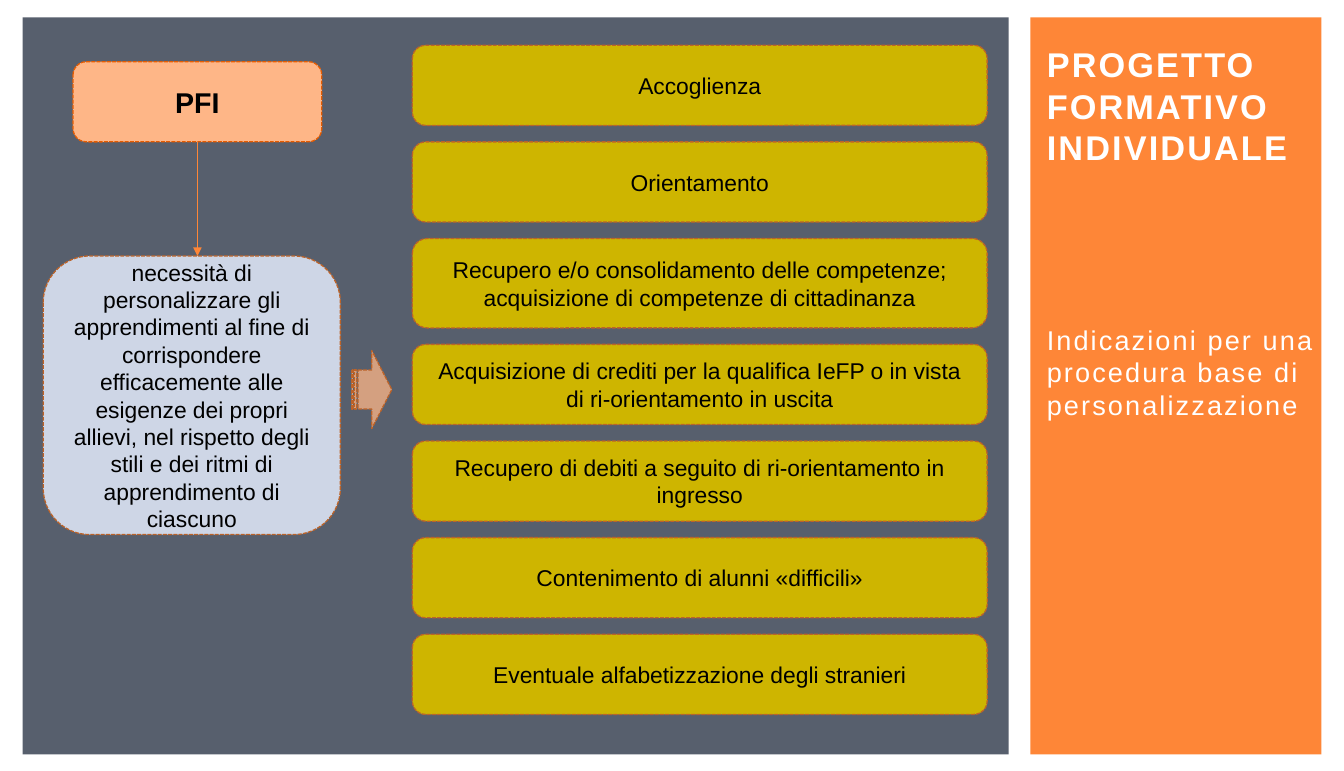
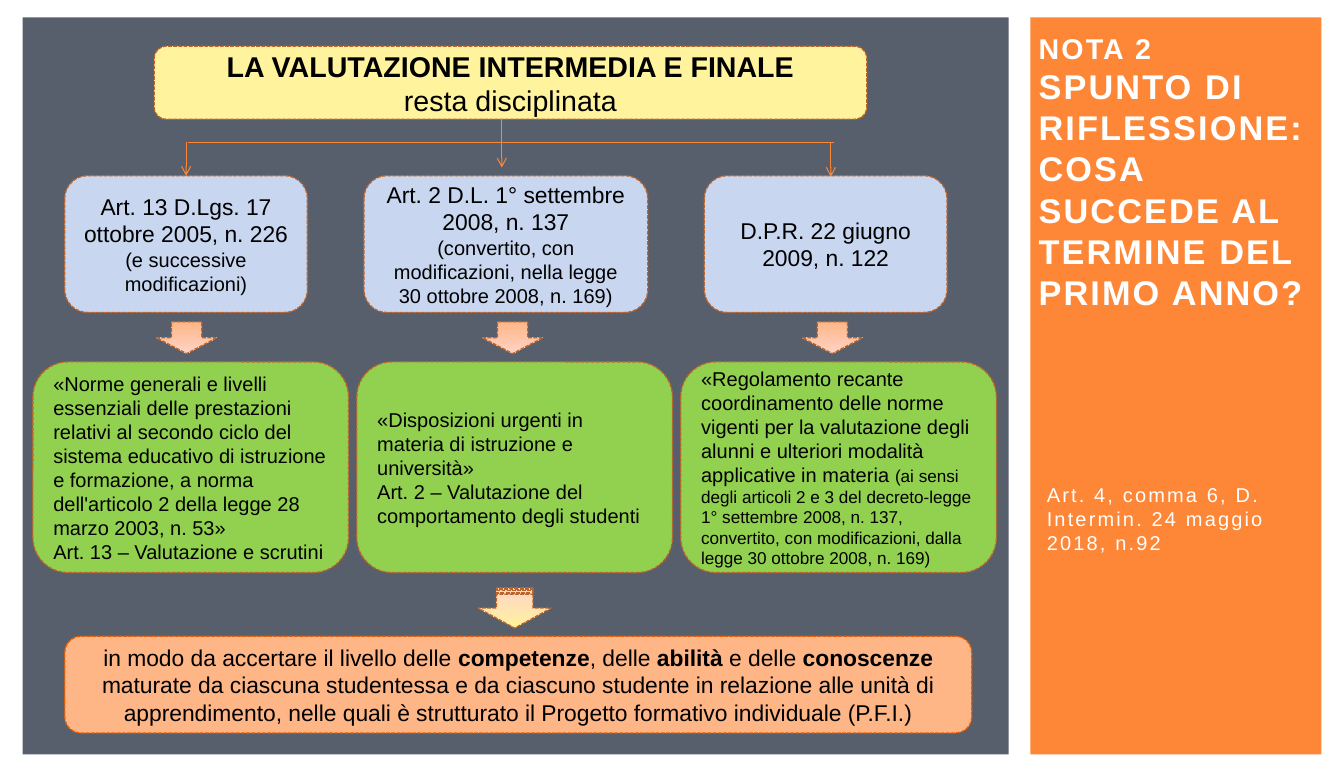
from pptx import Presentation
from pptx.dml.color import RGBColor as Rgb
from pptx.enum.dml import MSO_LINE as Dash
from pptx.enum.shapes import MSO_CONNECTOR as Wire, MSO_SHAPE as Form
from pptx.enum.text import MSO_ANCHOR as Anchor, MSO_AUTO_SIZE as Fit, PP_ALIGN as Align
from pptx.oxml.ns import qn
from pptx.util import Inches, Pt
from lxml.etree import SubElement as Sub

HUES = {
    "white": "FFFFFF", "black": "000000", "slate": "575F6D", "orange": "FE8637",
    "peach": "FEB687", "rust": "E75C01", "brown": "BC6329", "gold": "CEB500",
    "mist": "CED6E6", "sky": "C8D6F0", "cream": "FFF39D", "green": "92D050",
    "blush": "FFD4C7",
}
BOLD = {"bold": True}


def hue(name):
    return Rgb.from_string(HUES[name])


def cell(count):
    return Inches(count / 10)


class Deck:
    font = "Arial"
    cols, rows = 130.7, 75

    def __init__(self):
        self.show = Presentation()
        self.show.slide_width = cell(self.cols)
        self.show.slide_height = cell(self.rows)

    def start(self):
        self.slide = self.show.slides.add_slide(self.show.slide_layouts[0])
        for spot, (x, w, fill) in enumerate(((100.2, 28.3, "orange"), (2.2, 95.9, "slate"))):
            band = self.shape(Form.RECTANGLE, (x, 1.7, w, 71.7), fill, None)
            band._element.getparent().insert(2 + spot, band._element)

    def label(self, frame, paras, size, align, ink="black", bold=False, gap=None):
        frame.word_wrap = True
        frame.vertical_anchor = Anchor.MIDDLE
        frame.text = "\n" * (len(paras) - 1)
        for para, parts in zip(frame.paragraphs, paras):
            para.alignment = align
            for part in [parts] if isinstance(parts, str) else parts:
                text, style = (part, {}) if isinstance(part, str) else part
                run = para.add_run()
                run.text = text
                run.font.name = self.font
                run.font.size = Pt(style.get("size", size))
                run.font.bold = style.get("bold", bold)
                run.font.color.rgb = hue(ink)
                if gap:
                    run._r.get_or_add_rPr().set("spc", str(gap))

    def holder(self, index, at, paras, size, bold=False, base=0.5):
        item = self.slide.placeholders[index]
        item.left, item.top, item.width, item.height = map(cell, at)
        self.label(item.text_frame, paras, size, Align.LEFT, "white", bold, 150)
        item.text_frame.auto_size = Fit.NONE
        item.text_frame.margin_bottom = cell(base)

    def shape(self, form, at, fill, line="brown"):
        item = self.slide.shapes.add_shape(form, *map(cell, at))
        item.shadow.inherit = False
        if fill:
            item.fill.solid()
            item.fill.fore_color.rgb = hue(fill)
        if line:
            item.line.color.rgb = hue(line)
            item.line.width = Pt(0.9)
            item.line.dash_style = Dash.SQUARE_DOT
        else:
            item.line.fill.background()
        return item

    def box(self, at, fill, paras, size=16, align=Align.CENTER, bold=False, line="brown"):
        item = self.shape(Form.ROUNDED_RECTANGLE, at, fill, line)
        self.label(item.text_frame, paras, size, align, bold=bold)
        return item

    def fade(self, form, at, first, angle):
        item = self.shape(form, at, None)
        item.fill.gradient()
        item.fill.gradient_angle = angle
        for stop, name in zip(item.fill.gradient_stops, (first, "blush")):
            stop.color.rgb = hue(name)
        return item

    def wire(self, x, y, to_x, to_y, head=None, source=None, goal=None):
        item = self.slide.shapes.add_connector(Wire.STRAIGHT, *map(cell, (x, y, to_x, to_y)))
        if source:
            item.begin_connect(source, 2)
        if goal:
            item.end_connect(goal, 0)
        item.line.color.rgb = hue("orange")
        item.line.width = Pt(0.75)
        props = item._element.spPr
        if head:
            Sub(props.find(qn("a:ln")), qn("a:tailEnd"), type=head)
        Sub(props, qn("a:effectLst"))


def plan(deck):
    deck.start()
    deck.holder(0, (100.8, 2.1, 29.9, 20), ["PROGETTO FORMATIVO INDIVIDUALE"], 24, True, 4.2)
    deck.holder(1, (100.8, 26.2, 28.3, 20),
                ["Indicazioni per una procedura base di personalizzazione"], 19)
    head = deck.box((7.1, 6, 24.2, 7.8), "peach", ["PFI"], 20, bold=True, line="rust")
    steps = (
        ("Accoglienza", 7.8),
        ("Orientamento", 7.8),
        ("Recupero e/o consolidamento delle competenze; "
         "acquisizione di competenze di cittadinanza", 8.7),
        ("Acquisizione di crediti per la qualifica IeFP o in vista di "
         "ri-orientamento in uscita", 7.8),
        ("Recupero di debiti a seguito di ri-orientamento in ingresso", 7.8),
        ("Contenimento di alunni «difficili»", 7.8),
        ("Eventuale alfabetizzazione degli stranieri", 7.8),
    )
    top = 4.4
    for text, high in steps:
        deck.box((40.1, top, 55.9, high), "gold", [text])
        top += high + 1.6
    deck.box((4.2, 24.9, 28.9, 27.1), "mist", [
        "necessità di personalizzare gli apprendimenti al fine di corrispondere "
        "efficacemente alle esigenze dei propri allievi, nel rispetto degli stili "
        "e dei ritmi di apprendimento di ciascuno"])
    deck.wire(19.2, 13.8, 19.2, 24.9, "triangle", source=head)
    arrow = deck.shape(Form.STRIPED_RIGHT_ARROW, (34.2, 34.1, 3.9, 7.6), "peach")
    tint = arrow._element.spPr.find(qn("a:solidFill"))[0]
    Sub(tint, qn("a:alpha"), val="75000")


def review(deck):
    deck.start()
    deck.holder(0, (100, 2.9, 30.7, 27.6), [
        [("NOTA 2", {"size": 20})],
        "SPUNTO DI RIFLESSIONE: COSA SUCCEDE AL TERMINE DEL PRIMO ANNO?"], 24, True)
    deck.holder(1, (100.8, 28.8, 28.3, 43.3),
                ["Art. 4, comma 6, D. Intermin. 24 maggio 2018, n.92"], 14)
    deck.box((15, 4.5, 69.3, 7.1), "cream", [
        [("LA VALUTAZIONE INTERMEDIA E FINALE", BOLD)], "resta disciplinata"], 20)
    small = {"size": 14}
    laws = (
        (6.3, 23.6, 15.2, ["Art. 13 D.Lgs. 17 ottobre 2005, n. 226",
                           [("(e successive modificazioni)", small)]],
         ["«Norme generali e livelli essenziali delle prestazioni relativi al secondo "
          "ciclo del sistema educativo di istruzione e formazione, a norma "
          "dell'articolo 2 della legge 28 marzo 2003, n. 53»",
          "Art. 13 – Valutazione e scrutini"]),
        (35.4, 27.6, 46.9, ["Art. 2 D.L. 1° settembre 2008, n. 137",
                            [("(convertito, con modificazioni, nella legge "
                              "30 ottobre 2008, n. 169)", small)]],
         ["«Disposizioni urgenti in materia di istruzione e università»",
          "Art. 2 – Valutazione del comportamento degli studenti"]),
        (68.5, 23.6, 78, ["D.P.R. 22 giugno 2009, n. 122"],
         [["«Regolamento recante coordinamento delle norme vigenti per la valutazione "
           "degli alunni e ulteriori modalità applicative in materia ",
           ("(ai sensi degli articoli 2 e 3 del decreto-legge 1° settembre 2008, n. 137, "
            "convertito, con modificazioni, dalla legge 30 ottobre 2008, n. 169)",
            {"size": 12})]]),
    )
    acts = []
    for spot, (x, wide, mark, act, text) in enumerate(laws):
        acts.append(deck.box((x, 17.1, wide, 13.3), "sky", act))
        deck.box((3.2 + 31.5 * spot, 35.2, 30.7, 20.5), "green", text, 14, Align.LEFT)
        deck.fade(Form.DOWN_ARROW, (mark, 31.3, 5.9, 3.1), "peach", 270)
    deck.wire(18.3, 13.9, 81.1, 13.9)
    deck.wire(18.1, 13.8, 18.1, 17.1, "arrow", goal=acts[0])
    deck.wire(80.8, 13.9, 80.8, 17.2, "arrow")
    deck.wire(48.8, 11.6, 48.8, 16.3, "arrow")
    deck.fade(Form.STRIPED_RIGHT_ARROW, (48.1, 55.6, 3.9, 7.1), "cream", 180).rotation = 90
    deck.box((6.3, 61.9, 88.2, 9.4), "peach", [[
        "in modo da accertare il livello delle ", ("competenze", BOLD), ", delle ",
        ("abilità", BOLD), " e delle ", ("conoscenze", BOLD),
        " maturate da ciascuna studentessa e da ciascuno studente in relazione alle "
        "unità di apprendimento, nelle quali è strutturato il Progetto formativo "
        "individuale (P.F.I.)"]], line="rust")


def main():
    deck = Deck()
    plan(deck)
    review(deck)
    deck.show.save("out.pptx")


if __name__ == "__main__":
    main()
